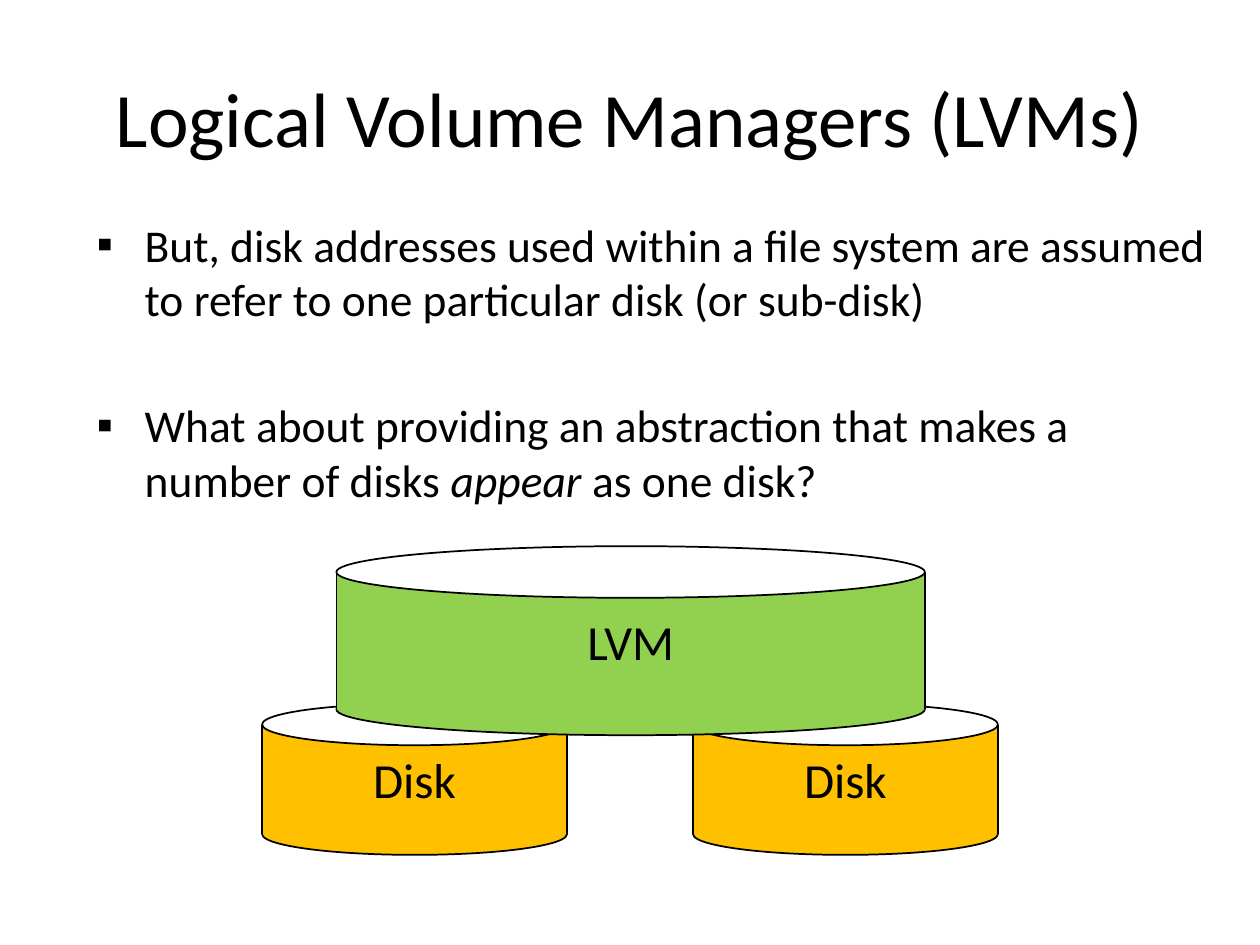
from dataclasses import dataclass

from lxml import etree
from pptx import Presentation
from pptx import util as u
from pptx.dml.color import RGBColor
from pptx.enum import shapes, text
from pptx.oxml import ns


@dataclass(frozen=True)
class Theme:
    """Colours, font and type sizes of the slide."""
    font: str = "Calibri"
    ink: str = "000000"
    lid: str = "FFFFFF"
    disk: str = "FFC000"
    volume: str = "92D050"
    title_size: int = 44
    body_size: int = 26
    label_size: int = 28
    line_width: int = 1


THEME = Theme()
BULLETS = [
    [("But, disk addresses used within a file system are assumed "
      "to refer to one particular disk (or sub-disk)", False)],
    [("What about providing an abstraction that makes a number of disks ", False),
     ("appear", True), (" as one disk?", False)],
]
BULLET_GAP = 41


def add_span(para, words, size, italic=False):
    """Add one run of text in the theme font."""
    span = para.add_run()
    span.text = words
    span.font.name = THEME.font
    span.font.size = u.Pt(size)
    span.font.italic = italic
    span.font.color.rgb = RGBColor.from_string(THEME.ink)


def add_box(page, left, top, width, height, anchor):
    """Add a wrapping text box and return its text frame."""
    box = page.shapes.add_textbox(*map(u.Inches, (left, top, width, height)))
    frame = box.text_frame
    frame.word_wrap = True
    frame.vertical_anchor = anchor
    return frame


def add_title(page, words):
    """Add the centred slide title."""
    frame = add_box(page, 0.5, 0.3, 9, 1.25, text.MSO_ANCHOR.MIDDLE)
    para = frame.paragraphs[0]
    para.alignment = text.PP_ALIGN.CENTER
    add_span(para, words, THEME.title_size)


def set_bullet(para):
    """Give a paragraph a square bullet with a hanging indent."""
    props = para._p.get_or_add_pPr()
    props.set("marL", str(u.Inches(0.38)))
    props.set("indent", str(-u.Inches(0.38)))
    etree.SubElement(props, ns.qn("a:buFont"), typeface=THEME.font)
    etree.SubElement(props, ns.qn("a:buChar"), char="▪")


def add_bullets(page, bullets):
    """Add the bulleted body text."""
    frame = add_box(page, 0.67, 1.67, 9.08, 5.75, text.MSO_ANCHOR.TOP)
    for index, spans in enumerate(bullets):
        para = frame.add_paragraph() if index else frame.paragraphs[0]
        para.space_before = u.Pt(BULLET_GAP if index else 0)
        set_bullet(para)
        for words, italic in spans:
            add_span(para, words, THEME.body_size, italic)


def add_part(group, kind, left, top, width, height, fill, outlined=True):
    """Add one filled shape of a cylinder."""
    part = group.shapes.add_shape(kind, *map(u.Inches, (left, top, width, height)))
    part.shadow.inherit = False
    part.fill.solid()
    part.fill.fore_color.rgb = RGBColor.from_string(fill)
    if outlined:
        part.line.color.rgb = RGBColor.from_string(THEME.ink)
        part.line.width = u.Pt(THEME.line_width)
    else:
        part.line.fill.background()
    return part


def add_edge(group, x, top, bottom):
    """Add one vertical side line of a cylinder."""
    edge = group.shapes.add_connector(
        shapes.MSO_CONNECTOR.STRAIGHT, *map(u.Inches, (x, top, x, bottom)))
    edge.line.color.rgb = RGBColor.from_string(THEME.ink)
    edge.line.width = u.Pt(THEME.line_width)
    etree.SubElement(edge._element.spPr, ns.qn("a:effectLst"))


def add_cylinder(page, label, left, top, width, height, cap, fill):
    """Add a labelled cylinder as a group of caps, wall and edges."""
    group = page.shapes.add_group_shape()
    oval = shapes.MSO_SHAPE.OVAL
    bottom = top + height
    add_part(group, oval, left, bottom - cap / 2, width, cap, fill)
    wall = add_part(group, shapes.MSO_SHAPE.RECTANGLE,
                    left, top, width, height, fill, outlined=False)
    frame = wall.text_frame
    frame.word_wrap = False
    frame.vertical_anchor = text.MSO_ANCHOR.MIDDLE
    para = frame.paragraphs[0]
    para.alignment = text.PP_ALIGN.CENTER
    add_span(para, label, THEME.label_size)
    add_part(group, oval, left, top - cap / 2, width, cap, THEME.lid)
    for x in (left, left + width):
        add_edge(group, x, top, bottom)


def main():
    """Build and save the slide."""
    deck = Presentation()
    deck.slide_width, deck.slide_height = u.Inches(10), u.Inches(7.5)
    page = deck.slides.add_slide(deck.slide_layouts[6])
    add_title(page, "Logical Volume Managers (LVMs)")
    add_bullets(page, BULLETS)
    for left in (2.08, 5.5):
        add_cylinder(page, "Disk", left, 5.75, 2.42, 0.87, 0.33, THEME.disk)
    add_cylinder(page, "LVM", 2.67, 4.54, 4.67, 1.09, 0.41, THEME.volume)
    deck.save("out.pptx")


if __name__ == "__main__":
    main()
